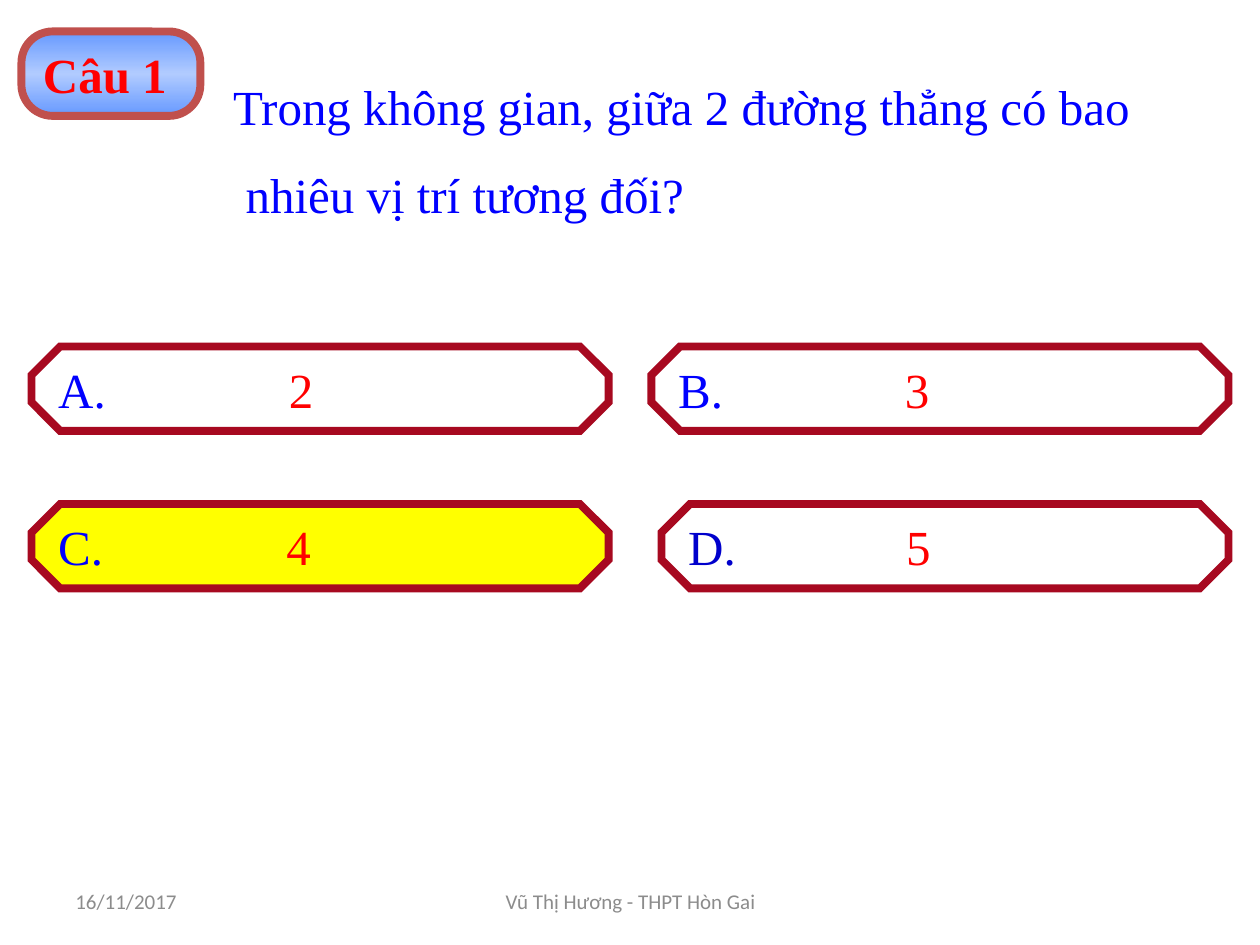
from copy import deepcopy

from pptx import Presentation
from pptx.dml.color import RGBColor
from pptx.enum.shapes import MSO_SHAPE
from pptx.enum.text import MSO_ANCHOR, MSO_AUTO_SIZE, PP_ALIGN
from pptx.oxml.ns import qn
from pptx.util import Inches, Pt
from lxml import etree

OCTAGON, ROUNDED = MSO_SHAPE.OCTAGON, MSO_SHAPE.ROUNDED_RECTANGLE
TOP, MIDDLE = MSO_ANCHOR.TOP, MSO_ANCHOR.MIDDLE
LEFT, CENTER = PP_ALIGN.LEFT, PP_ALIGN.CENTER
NO_FIT = MSO_AUTO_SIZE.NONE

RED = RGBColor(0xFF, 0x00, 0x00)
BLUE = RGBColor(0x00, 0x00, 0xFF)
DARK_BLUE = RGBColor(0x00, 0x00, 0xCC)
CRIMSON = RGBColor(0xA7, 0x09, 0x20)
BRICK = RGBColor(0xC0, 0x50, 0x4D)
YELLOW = RGBColor(0xFF, 0xFF, 0x00)
GREY = RGBColor(0x8C, 0x8C, 0x8C)
SKY = RGBColor(0x66, 0x99, 0xFF)
PALE_SKY = RGBColor(0xB1, 0xCB, 0xFF)


class QuizPage:
    """Holds the quiz style and the current slide."""

    font = "Times New Roman"
    size = 28
    border = 4.5

    def __init__(self, deck):
        self.page = deck.slides.add_slide(deck.slide_layouts[5])

    def add_span(self, para, text, color, size=size, font=font, bold=False):
        span = para.add_run()
        span.text = text
        span.font.name = font
        span.font.size = Pt(size)
        span.font.bold = bold
        span.font.color.rgb = color

    def place(self, box, left, top, width, height):
        box.left, box.top = Inches(left), Inches(top)
        box.width, box.height = Inches(width), Inches(height)

    def add_question(self, lines, *bounds):
        title = self.page.shapes.title
        self.place(title, *bounds)
        frame = title.text_frame
        frame.word_wrap = True
        frame.auto_size = NO_FIT
        frame.vertical_anchor = TOP
        for number, (text, indent) in enumerate(lines):
            para = frame.add_paragraph() if number else frame.paragraphs[0]
            para.alignment = LEFT
            para.line_spacing = 1.5
            para.space_before = Pt(0)
            para._p.get_or_add_pPr().set("marL", str(Inches(indent)))
            self.add_span(para, text, BLUE)

    def add_frame(self, kind, corner, color, left, top, width, height):
        box = self.page.shapes.add_shape(
            kind, Inches(left), Inches(top), Inches(width), Inches(height))
        box.adjustments[0] = corner
        box.shadow.inherit = False
        box.line.color.rgb = color
        box.line.width = Pt(self.border)
        etree.SubElement(box.line._ln, qn("a:miter"), lim="800000")
        box.text_frame.word_wrap = True
        box.text_frame.vertical_anchor = MIDDLE
        box.text_frame.paragraphs[0].alignment = LEFT
        return box

    def add_badge(self, text, *bounds):
        box = self.add_frame(ROUNDED, 0.37, BRICK, *bounds)
        box.fill.gradient()
        box.fill.gradient_angle = 90
        stops = box.fill._fill._gradFill.find(qn("a:gsLst"))
        stops.insert(1, deepcopy(stops[0]))
        for stop, position, color in zip(
                box.fill.gradient_stops, (0, 0.5, 1), (SKY, PALE_SKY, SKY)):
            stop.position = position
            stop.color.rgb = color
        self.add_span(box.text_frame.paragraphs[0], text, RED, bold=True)

    def add_answer(self, letter, value, left, top, tab, color, fill):
        right = 4.83 if left < 5 else 9.75
        box = self.add_frame(OCTAGON, 0.34, CRIMSON, left, top, right - left, 0.67)
        if fill is None:
            box.fill.background()
        else:
            box.fill.solid()
            box.fill.fore_color.rgb = fill
        para = box.text_frame.paragraphs[0]
        tabs = etree.SubElement(para._p.get_or_add_pPr(), qn("a:tabLst"))
        etree.SubElement(tabs, qn("a:tab"), pos=str(Inches(tab)), algn="l")
        self.add_span(para, f"{letter}.\t", color)
        self.add_span(para, value, RED)

    def add_footer(self, text, left, width, alignment):
        box = self.page.shapes.add_textbox(
            Inches(left), Inches(6.95), Inches(width), Inches(0.4))
        box.text_frame.word_wrap = True
        box.text_frame.vertical_anchor = MIDDLE
        para = box.text_frame.paragraphs[0]
        para.alignment = alignment
        self.add_span(para, text, GREY, size=12, font="Calibri")


def main():
    deck = Presentation()
    deck.slide_width, deck.slide_height = Inches(10), Inches(7.5)
    quiz = QuizPage(deck)
    quiz.add_question(
        [("Trong không gian, giữa 2 đường thẳng có bao", 0),
         ("nhiêu vị trí tương đối?", 0.1)],
        1.75, 0.32, 7.75, 1.43)
    quiz.add_badge("Câu 1", 0.17, 0.25, 1.42, 0.67)
    for answer in (
            ("A", "2", 0.25, 2.75, 1.83, BLUE, None),
            ("B", "3", 5.17, 2.75, 1.8, BLUE, None),
            ("C", "4", 0.25, 4, 1.81, BLUE, YELLOW),
            ("D", "5", 5.25, 4, 1.73, DARK_BLUE, None)):
        quiz.add_answer(*answer)
    quiz.add_footer("16/11/2017", 0.5, 2.33, LEFT)
    quiz.add_footer("Vũ Thị Hương - THPT Hòn Gai", 3.42, 3.17, CENTER)
    deck.save("out.pptx")


if __name__ == "__main__":
    main()
